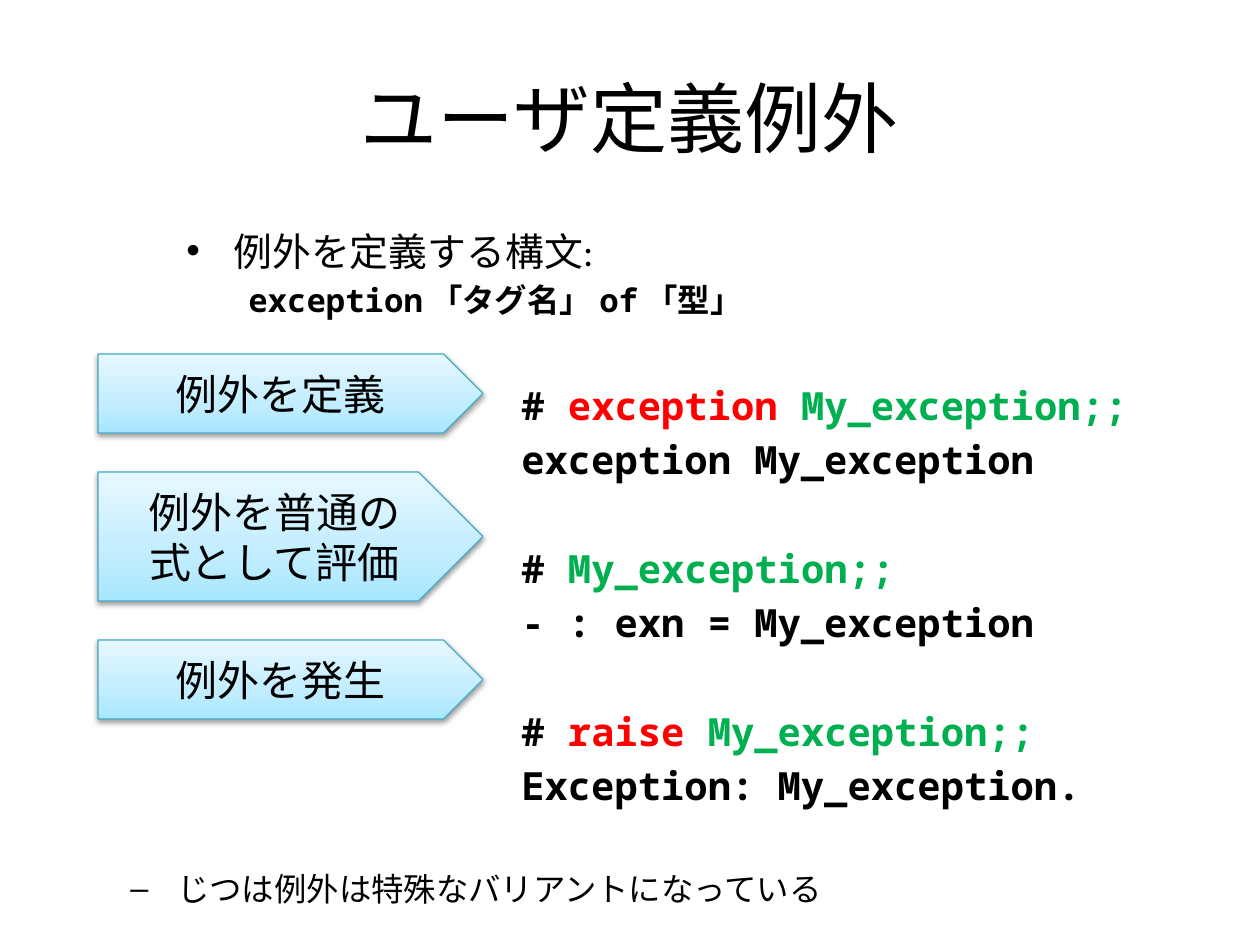
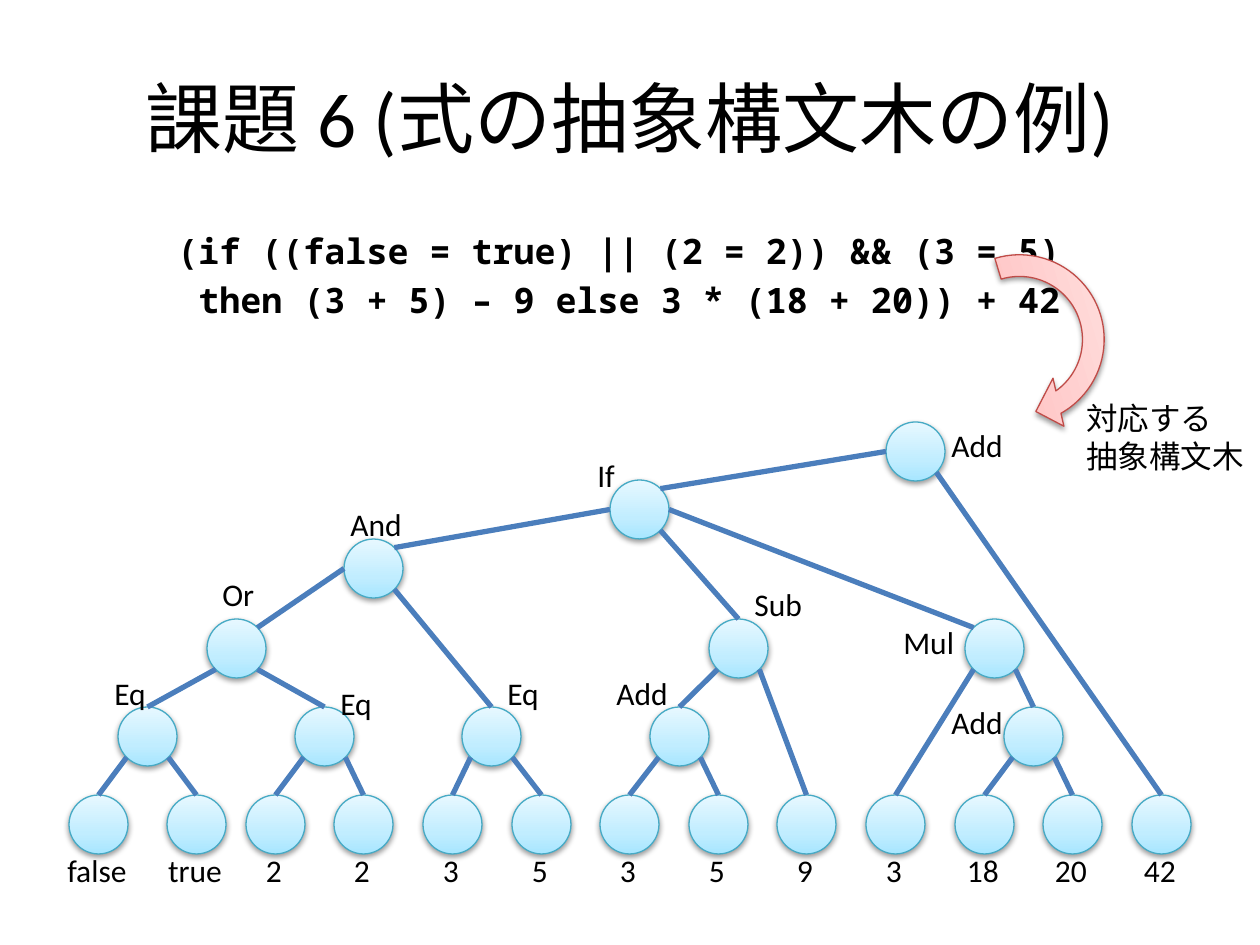
from collections import namedtuple
from math import sqrt

from lxml.etree import SubElement
from pptx import Presentation
from pptx.dml.color import RGBColor
from pptx.enum.shapes import MSO_CONNECTOR, MSO_SHAPE
from pptx.enum.text import MSO_ANCHOR, PP_ALIGN
from pptx.oxml import parse_xml
from pptx.oxml.ns import nsdecls, qn
from pptx.util import Emu, Pt

# Style
SCALE = 914400 / 126
SANS, MONO = "Calibri", "Noto Sans Mono"
BLACK = RGBColor(0x00, 0x00, 0x00)
RED = RGBColor(0xFF, 0x00, 0x00)
GREEN = RGBColor(0x00, 0xB0, 0x50)
EDGE_BLUE = RGBColor(0x4B, 0x7E, 0xBC)
AQUA_LINE = RGBColor(0x46, 0xAA, 0xC5)
ROSE_LINE = RGBColor(0xBF, 0x4C, 0x48)
AQUA = [RGBColor(0xA7, 0xE6, 0xFF), RGBColor(0xC1, 0xED, 0xFF), RGBColor(0xE7, 0xF8, 0xFF)]
ROSE = [RGBColor(0xFF, 0xA6, 0xA5), RGBColor(0xFF, 0xC0, 0xBF), RGBColor(0xFF, 0xE7, 0xE7)]
STOPS = (0, 35, 100)


def px(length):
    return Emu(round(length * SCALE))


def add_span(para, text, *, size=18, font=SANS, color=BLACK, bold=False):
    """Append text to a paragraph; a newline becomes a line break."""
    for number, line in enumerate(text.split("\n")):
        if number:
            para.add_line_break()
        span = para.add_run()
        span.text = line
        span.font.size = Pt(size)
        span.font.name = font
        span.font.bold = bold
        span.font.color.rgb = color


class SlideBuilder:
    def __init__(self, deck):
        self.deck = deck
        self.page = None

    def new_page(self, title):
        self.page = self.deck.slides.add_slide(self.deck.slide_layouts[6])
        self.text(title, 63, 38, 1134, 158, size=44,
                  align=PP_ALIGN.CENTER, anchor=MSO_ANCHOR.MIDDLE)

    def box(self, left, top, width, height, anchor=MSO_ANCHOR.TOP):
        frame = self.page.shapes.add_textbox(
            px(left), px(top), px(width), px(height)).text_frame
        frame.word_wrap = True
        frame.vertical_anchor = anchor
        return frame

    def text(self, text, left, top, width, height,
             align=PP_ALIGN.LEFT, anchor=MSO_ANCHOR.TOP, **style):
        para = self.box(left, top, width, height, anchor).paragraphs[0]
        para.alignment = align
        add_span(para, text, **style)

    def body_line(self, frame, spans, size, indent, bullet=None, gap=0, **style):
        """Add one body paragraph; spans are (text, format) pairs."""
        first = not frame.paragraphs[0].runs
        para = frame.paragraphs[0] if first else frame.add_paragraph()
        para.space_before = Pt(round(size * 0.2 + gap, 1))
        properties = para._p.get_or_add_pPr()
        properties.set("marL", str(px(indent)))
        if bullet:
            properties.set("indent", str(px(-47)))
            SubElement(properties, qn("a:buFont")).set("typeface", "Arial")
            SubElement(properties, qn("a:buChar")).set("char", bullet)
        for text, extra in spans:
            add_span(para, text, size=size, **{**style, **extra})

    def shape(self, kind, left, top, width, height, colors=AQUA, outline=AQUA_LINE):
        """Add a glossy shape with a gradient, a thin outline and a soft shadow."""
        shape = self.page.shapes.add_shape(kind, px(left), px(top), px(width), px(height))
        shape.fill.gradient()
        shape.fill.gradient_angle = 90
        stop_list = shape._element.spPr.find(".//" + qn("a:gsLst"))
        for stop in list(stop_list):
            stop_list.remove(stop)
        for position, color in zip(STOPS, colors):
            stop = SubElement(stop_list, qn("a:gs"), pos=str(position * 1000))
            SubElement(stop, qn("a:srgbClr"), val=str(color))
        shape.line.color.rgb = outline
        shape.line.width = Pt(0.75)
        shape.shadow.inherit = False
        shape._element.spPr.find(qn("a:effectLst")).append(parse_xml(
            f'<a:outerShdw {nsdecls("a")} blurRad="40000" dist="20000" dir="5400000" '
            'rotWithShape="0"><a:srgbClr val="000000"><a:alpha val="38000"/>'
            '</a:srgbClr></a:outerShdw>'))
        return shape

    def tag(self, text, top, height):
        frame = self.shape(MSO_SHAPE.PENTAGON, 98, top, 385, height).text_frame
        frame.word_wrap = True
        frame.vertical_anchor = MSO_ANCHOR.MIDDLE
        frame.paragraphs[0].alignment = PP_ALIGN.CENTER
        add_span(frame.paragraphs[0], text, size=24)

    def line(self, start, end):
        line = self.page.shapes.add_connector(
            MSO_CONNECTOR.STRAIGHT, *map(px, start), *map(px, end))
        line.line.color.rgb = EDGE_BLUE
        line.line.width = Pt(3)
        SubElement(line._element.spPr, qn("a:effectLst"))


# Slide 1: user-defined exceptions
CODE_GROUPS = [
    [[("# ", {}), ("exception ", {"color": RED}), ("My_exception;;", {"color": GREEN})],
     [("exception My_exception", {})]],
    [[("# ", {}), ("My_exception;;", {"color": GREEN})],
     [("- : exn = My_exception", {})]],
    [[("# ", {}), ("raise ", {"color": RED}), ("My_exception;;", {"color": GREEN})],
     [("Exception: My_exception.", {})]],
]
GROUP_GAP = 31.1
TAGS = [("例外を定義", 354, 79), ("例外を普通の\n式として評価", 472, 129), ("例外を発生", 640, 79)]


def build_exceptions(builder):
    builder.new_page("ユーザ定義例外")
    body = builder.box(63, 221, 1134, 624)
    builder.body_line(body, [("例外を定義する構文:", {})], 22.2, 158, bullet="•")
    builder.body_line(
        body,
        [("exception", {"font": MONO}), (" 「タグ名」 ", {}),
         ("of", {"font": MONO}), (" 「型」", {})],
        18.5, 173, bold=True)
    for group in CODE_GROUPS:
        for number, spans in enumerate(group):
            builder.body_line(body, spans, 22.2, 446, font=MONO, bold=True,
                              gap=0 if number else GROUP_GAP)
    builder.body_line(body, [("じつは例外は特殊なバリアントになっている", {})],
                      18.5, 102, bullet="–", gap=GROUP_GAP)
    for text, top, height in TAGS:
        builder.tag(text, top, height)


# Slide 2: abstract syntax tree
NODE = 59
LEAF_TOP, LEAF_LABEL_TOP = 795, 845
LEAVES = ["false", "true", "2", "2", "3", "5", "3", "5", "9", "3", "18", "20", "42"]
DIAGONAL = 1 / sqrt(2)
SITES = {
    "top": (0, -1), "left": (-1, 0), "right": (1, 0),
    "top left": (-DIAGONAL, -DIAGONAL), "top right": (DIAGONAL, -DIAGONAL),
    "bottom left": (-DIAGONAL, DIAGONAL), "bottom right": (DIAGONAL, DIAGONAL),
}
# Children are branch names or leaf numbers; links give (parent site, child site).
Branch = namedtuple("Branch", "label left top label_left label_top children links")
PAIR = [("bottom left", "top"), ("bottom right", "top")]
STEP_LEFT = [("left", "top right"), ("bottom right", "top")]
BRANCHES = {
    "root": Branch("Add", 886, 422, 939, 420, ["if", 12], STEP_LEFT),
    "if": Branch("If", 610, 480, 585, 450, ["and", "sub", "mul"],
                 STEP_LEFT + [("right", "top left")]),
    "and": Branch("And", 344, 539, 338, 499, ["or", "eq 3 5"], STEP_LEFT),
    "or": Branch("Or", 207, 619, 210, 569, ["eq bool", "eq 2 2"], PAIR),
    "sub": Branch("Sub", 709, 619, 742, 579, ["add 3 5", 8], PAIR),
    "mul": Branch("Mul", 965, 619, 891, 617, [9, "add 18 20"], PAIR),
    "eq bool": Branch("Eq", 118, 707, 102, 668, [0, 1], PAIR),
    "eq 2 2": Branch("Eq", 295, 707, 328, 678, [2, 3], PAIR),
    "eq 3 5": Branch("Eq", 462, 707, 495, 668, [4, 5], PAIR),
    "add 3 5": Branch("Add", 650, 707, 604, 668, [6, 7], PAIR),
    "add 18 20": Branch("Add", 1004, 707, 939, 697, [10, 11], PAIR),
}


def leaf_left(number):
    shift = 10 if LEAVES[number] == "true" else 0
    return 69 + number * 443 // 5 + shift


def site_point(corner, site):
    return [edge + NODE / 2 * (1 + offset) for edge, offset in zip(corner, SITES[site])]


def build_tree(builder):
    builder.new_page("課題 6 (式の抽象構文木の例)")
    body = builder.box(63, 223, 1158, 210)
    for code in ("(if ((false = true) || (2 = 2)) && (3 = 5)",
                 " then (3 + 5) – 9 else 3 * (18 + 20)) + 42"):
        builder.body_line(body, [(code, {})], 20, 102, font=MONO, bold=True)

    # Nodes
    corners = {name: (branch.left, branch.top) for name, branch in BRANCHES.items()}
    corners.update({number: (leaf_left(number), LEAF_TOP) for number in range(len(LEAVES))})
    for left, top in corners.values():
        builder.shape(MSO_SHAPE.OVAL, left, top, NODE, NODE)

    # Edges
    for name, branch in BRANCHES.items():
        for child, (start, end) in zip(branch.children, branch.links):
            builder.line(site_point(corners[name], start), site_point(corners[child], end))

    # Labels
    for number, label in enumerate(LEAVES):
        builder.text(label, leaf_left(number) - 22, LEAF_LABEL_TOP, 100, 50,
                     align=PP_ALIGN.CENTER)
    for branch in BRANCHES.values():
        builder.text(branch.label, branch.label_left, branch.label_top, 90, 50)

    # Arrow from the expression to its tree
    arrow = builder.shape(MSO_SHAPE.CIRCULAR_ARROW, 921, 241, 197, 197, ROSE, ROSE_LINE)
    arrow.rotation = 73.1
    for number, value in enumerate((0.11, 11.42, 207.03, 108, 0.125)):
        arrow.adjustments[number] = value
    builder.text("対応する\n抽象構文木", 1074, 393, 186, 89)


def main():
    deck = Presentation()
    deck.slide_width, deck.slide_height = px(1260), px(945)
    builder = SlideBuilder(deck)
    build_exceptions(builder)
    build_tree(builder)
    deck.save("out.pptx")


if __name__ == "__main__":
    main()
